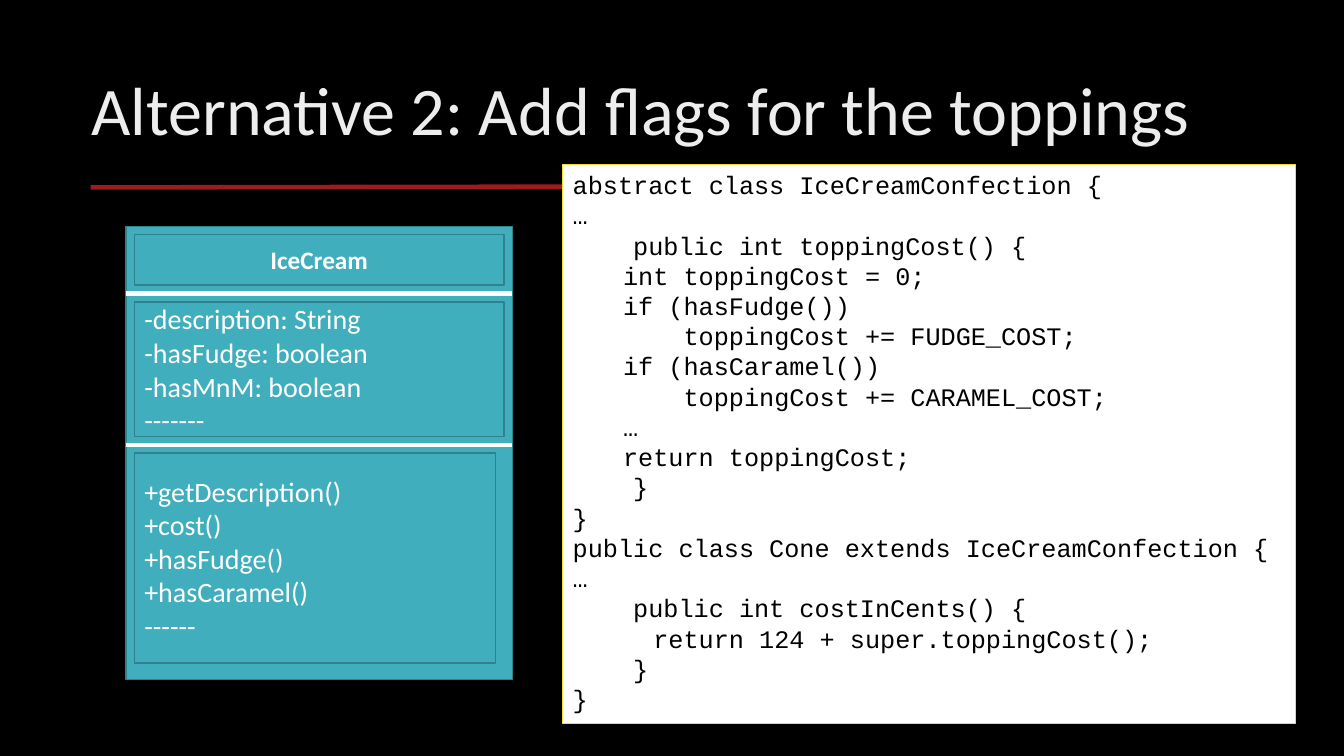
from pptx import Presentation
from pptx import util as u
from pptx.dml.color import RGBColor
from pptx.enum import shapes, text
from pptx.oxml.ns import qn
from lxml import etree

Pt = u.Pt
LEFT, CENTER = text.PP_ALIGN.LEFT, text.PP_ALIGN.CENTER
TOP, MIDDLE = text.MSO_ANCHOR.TOP, text.MSO_ANCHOR.MIDDLE
TEAL, TEAL_EDGE, WHITE = "41AEBD", "30818C", "FFFFFF"

prs = Presentation()
prs.slide_width, prs.slide_height = Pt(960), Pt(540)
slide = prs.slides.add_slide(prs.slide_layouts[6])
color = RGBColor.from_string
slide.background.fill.solid()
slide.background.fill.fore_color.rgb = color("000000")


def write(shape, lines, font, size, ink, align=LEFT, anchor=MIDDLE, bold=False):
    """Fill a shape with one paragraph per line."""
    frame = shape.text_frame
    frame.word_wrap = True
    frame.vertical_anchor = anchor
    for i, line in enumerate(lines):
        paragraph = frame.paragraphs[0] if i == 0 else frame.add_paragraph()
        paragraph.alignment = align
        run = paragraph.add_run()
        run.text = line
        run.font.name, run.font.size, run.font.bold = font, Pt(size), bold
        run.font.color.rgb = color(ink)


def rule(x1, y1, x2, y2, ink, width):
    line = slide.shapes.add_connector(
        shapes.MSO_CONNECTOR.STRAIGHT, Pt(x1), Pt(y1), Pt(x2), Pt(y2))
    line.line.color.rgb = color(ink)
    line.line.width = Pt(width)
    etree.SubElement(line._element.spPr, qn("a:effectLst"))


# Title and its underline
rule(64.8, 133.9, 894.2, 132.5, "9E1B20", 3.25)
title = slide.shapes.add_textbox(Pt(58.3), Pt(30.2), Pt(877.7), Pt(102.2))
write(title, ["Alternative 2: Add flags for the toppings"], "Calibri", 48.6, "EDEDED")
title.text_frame.paragraphs[0].line_spacing = 0.9

# Class diagram, then the code panel over the underline
class_name = ["IceCream"]
attributes = ["-description: String", "-hasFudge: boolean", "-hasMnM: boolean", "-------"]
methods = ["+getDescription()", "+cost()", "+hasFudge()", "+hasCaramel()", "------"]
code = """abstract class IceCreamConfection {
…
    public int toppingCost() {
\tint toppingCost = 0;
\tif (hasFudge())
\t    toppingCost += FUDGE_COST;
\tif (hasCaramel())
\t    toppingCost += CARAMEL_COST;
\t…
\treturn toppingCost;
    }
}
public class Cone extends IceCreamConfection {
…
    public int costInCents() {
\t  return 124 + super.toppingCost();
    }
}""".split("\n")

calibri = ("Calibri", 20, WHITE)
panels = [
    (90, 161.6, 276, 324, TEAL, TEAL_EDGE, None),
    (96, 167.6, 264, 36, TEAL, TEAL_EDGE,
     (class_name, "Calibri", 18, WHITE, CENTER, MIDDLE, True)),
    (96, 215.6, 264, 96, TEAL, TEAL_EDGE, (attributes, *calibri)),
    (96, 323.6, 258, 150, TEAL, TEAL_EDGE, (methods, *calibri)),
    (402, 117.4, 523.4, 399.6, WHITE, "F4DE3A",
     (code, "Courier New", 18, "000000", LEFT, TOP)),
]
for left, top, width, height, fill, edge, content in panels:
    panel = slide.shapes.add_shape(
        shapes.MSO_SHAPE.RECTANGLE, Pt(left), Pt(top), Pt(width), Pt(height))
    panel.shadow.inherit = False
    panel.fill.solid()
    panel.fill.fore_color.rgb = color(fill)
    panel.line.color.rgb = color(edge)
    panel.line.width = Pt(1)
    if content:
        write(panel, *content)

for divider in (209.6, 317.6):
    rule(90, divider, 366, divider, WHITE, 3)

prs.save("out.pptx")
